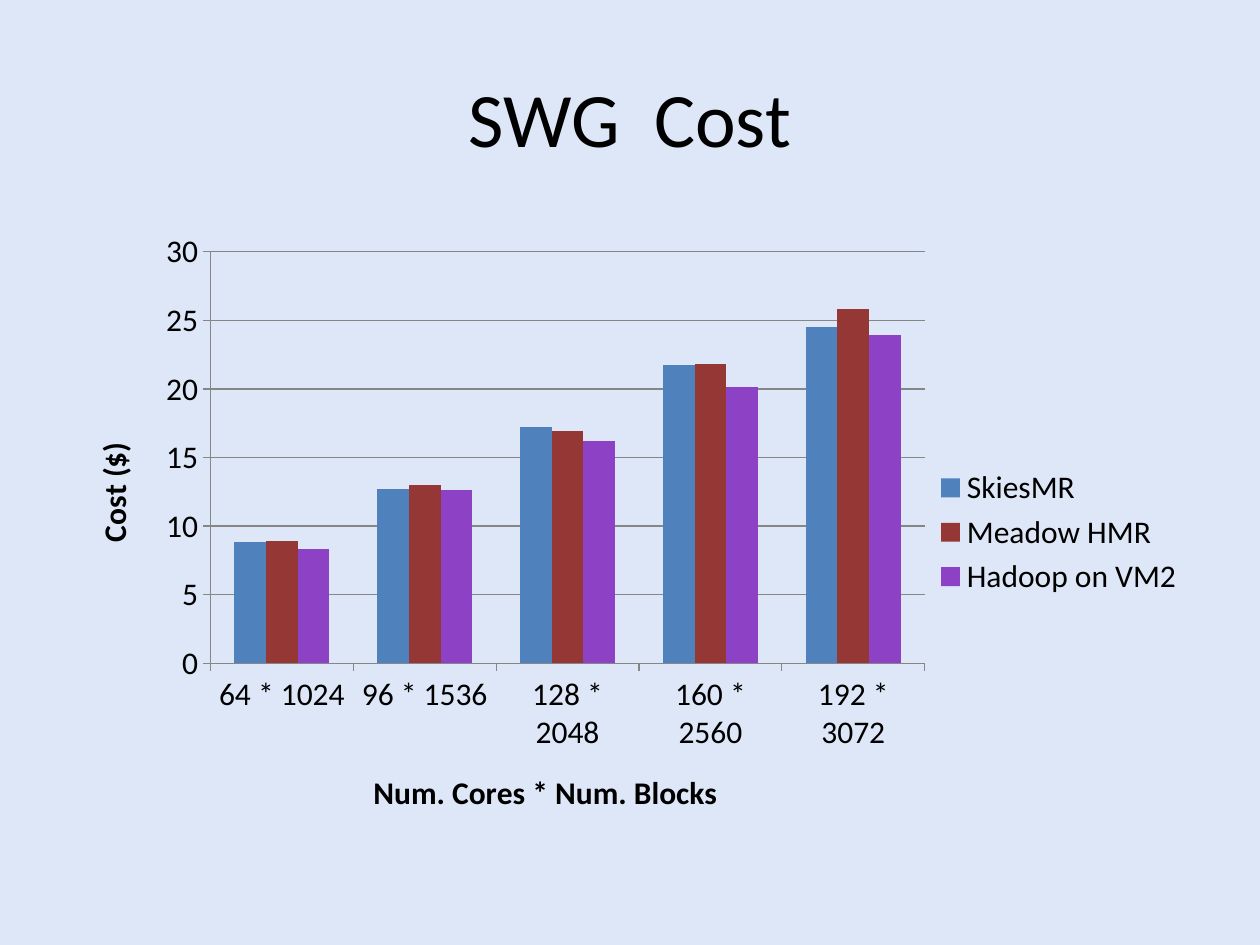
from lxml.etree import SubElement
from pptx import Presentation
from pptx.chart.data import CategoryChartData
from pptx.dml.color import RGBColor
from pptx.enum.chart import XL_CHART_TYPE as ChartType, XL_LEGEND_POSITION as LegendSpot, XL_TICK_MARK as Tick
from pptx.enum.text import MSO_ANCHOR as Anchor, PP_ALIGN as Align
from pptx.oxml.ns import qn
from pptx.util import Inches, Pt

TITLE = "SWG  Cost"
FONT = "Calibri"
COLORS = {"page": "DEE7F8", "text": "000000", "rule": "868686",
          "blue": "4F81BD", "red": "953735", "purple": "8D42C6"}
CATEGORIES = ["64 * 1024", "96 * 1536", "128 * 2048", "160 * 2560", "192 * 3072"]
SERIES = [
    ("SkiesMR", "blue", [8.8, 12.7, 17.2, 21.7, 24.5]),
    ("Meadow HMR", "red", [8.9, 13, 16.9, 21.8, 25.8]),
    ("Hadoop on VM2", "purple", [8.3, 12.6, 16.2, 20.1, 23.9]),
]
PLOT_AREA = {"x": 0.13, "y": 0.05, "w": 0.63, "h": 0.66}


def color(name):
    return RGBColor.from_string(COLORS[name])


def style_font(font, size, bold=False):
    font.name, font.size, font.bold = FONT, Pt(size), bold
    font.color.rgb = color("text")


def style_line(line):
    line.color.rgb = color("rule")
    line.width = Pt(0.75)


def style_axis(axis, title):
    axis.major_tick_mark, axis.minor_tick_mark = Tick.OUTSIDE, Tick.NONE
    style_line(axis.format.line)
    frame = axis.axis_title.text_frame
    frame.text = title
    style_font(frame.paragraphs[0].font, 18, True)


def place_plot(chart):
    plot_area = chart.plots[0]._element.getparent()
    layout = plot_area.find(qn("c:layout"))
    if layout is None:
        layout = SubElement(plot_area, qn("c:layout"))
        plot_area.insert(0, layout)
    manual = SubElement(layout, qn("c:manualLayout"))
    settings = {"layoutTarget": "inner", "xMode": "edge", "yMode": "edge", **PLOT_AREA}
    for tag, value in settings.items():
        SubElement(manual, qn(f"c:{tag}")).set("val", str(value))


def add_title(page):
    title = page.shapes.title
    title.left, title.top, title.width, title.height = map(Inches, (0.5, 0.3, 9, 1.25))
    title.text_frame.text = TITLE
    title.text_frame.vertical_anchor = Anchor.MIDDLE
    para = title.text_frame.paragraphs[0]
    para.alignment = Align.CENTER
    style_font(para.font, 44)


def add_cost_chart(page):
    data = CategoryChartData()
    data.categories = CATEGORIES
    for name, _, values in SERIES:
        data.add_series(name, values)
    area = map(Inches, (0.5, 1.75, 9, 4.95))
    chart = page.shapes.add_chart(ChartType.COLUMN_CLUSTERED, *area, data).chart
    style_font(chart.font, 18)
    chart.has_title = False
    chart.has_legend = True
    chart.legend.position = LegendSpot.RIGHT
    chart.legend.include_in_layout = False
    plot = chart.plots[0]
    plot.gap_width, plot.overlap, plot.vary_by_categories = 150, 0, False
    for series, (_, fill, _) in zip(plot.series, SERIES):
        series.format.fill.solid()
        series.format.fill.fore_color.rgb = color(fill)
    style_axis(chart.category_axis, "Num. Cores * Num. Blocks")
    costs = chart.value_axis
    style_axis(costs, "Cost ($)")
    costs.minimum_scale, costs.maximum_scale, costs.major_unit = 0, 30, 5
    style_line(costs.major_gridlines.format.line)
    place_plot(chart)


def main():
    """Build the cost comparison slide."""
    deck = Presentation()
    deck.slide_width, deck.slide_height = Inches(10), Inches(7.5)
    page = deck.slides.add_slide(deck.slide_layouts[5])
    page.background.fill.solid()
    page.background.fill.fore_color.rgb = color("page")
    add_title(page)
    add_cost_chart(page)
    deck.save("out.pptx")


if __name__ == "__main__":
    main()
